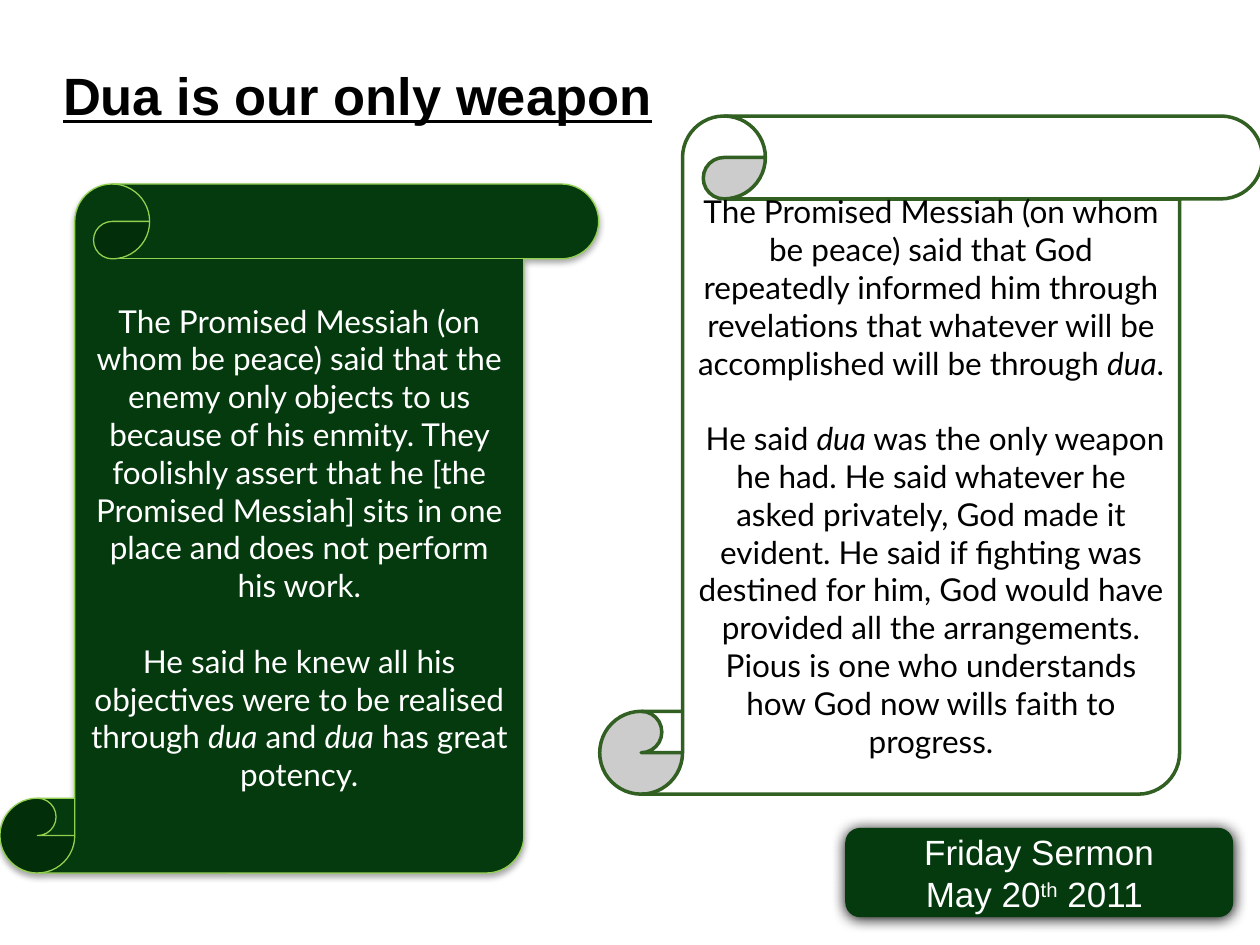
from lxml.etree import SubElement
from pptx import Presentation
from pptx.dml.color import RGBColor
from pptx.enum.shapes import MSO_SHAPE as Preset
from pptx.enum.text import MSO_ANCHOR as Anchor, PP_ALIGN as Align
from pptx.oxml.ns import qn
from pptx.util import Cm, Pt

DARK_GREEN = RGBColor(0x04, 0x3A, 0x0D)
LIME = RGBColor(0x92, 0xD0, 0x50)
LEAF_GREEN = RGBColor(0x32, 0x60, 0x23)
WHITE = RGBColor(0xFF, 0xFF, 0xFF)
BLACK = RGBColor(0x00, 0x00, 0x00)

ENEMY_TEXT = [
    [("The Promised Messiah (on whom be peace) said that the enemy only objects "
      "to us because of his enmity. They foolishly assert that he [the Promised "
      "Messiah] sits in one place and does not perform his work.", "")],
    [("He said he knew all his objectives were to be realised through ", ""),
     ("dua", "italic"), (" and ", ""), ("dua", "italic"),
     (" has great potency.", "")],
]
WEAPON_TEXT = [
    [("The Promised Messiah (on whom be peace) said that God repeatedly informed "
      "him through revelations that whatever will be accomplished will be "
      "through ", ""), ("dua", "italic"), (".", "")],
    [(" He said ", ""), ("dua", "italic"),
     (" was the only weapon he had. He said whatever he asked privately, God made "
      "it evident. He said if fighting was destined for him, God would have "
      "provided all the arrangements. Pious is one who understands how God now "
      "wills faith to progress.", "")],
]
SERMON_TEXT = [
    [("Friday Sermon", "")],
    [("May 20", ""), ("th", "superscript"), (" 2011 ", "")],
]


def write_text(shape, paragraphs, *, size, color, font="Lato", align=Align.CENTER,
               anchor=Anchor.MIDDLE, bold=False, underline=False, gap=0):
    """Write paragraphs of (text, style) runs; gap is the points between them."""
    frame = shape.text_frame
    frame.word_wrap = True
    frame.vertical_anchor = anchor
    for index, runs in enumerate(paragraphs):
        paragraph = frame.add_paragraph() if index else frame.paragraphs[0]
        paragraph.alignment = align
        paragraph.space_before = Pt(gap if index else 0)
        for text, style in runs:
            run = paragraph.add_run()
            run.text = text
            run.font.name = font
            run.font.size = Pt(size)
            run.font.color.rgb = color
            run.font.bold = bold
            run.font.underline = underline
            run.font.italic = style == "italic"
            if style == "superscript":
                run.font._element.set("baseline", "30000")


def add_shadow(shape, opacity, blur, distance):
    """Cast a black shadow downwards; opacity in percent, lengths in points."""
    effects = shape._element.spPr.find(qn("a:effectLst"))
    shadow = SubElement(effects, qn("a:outerShdw"), blurRad=str(Pt(blur)),
                        dist=str(Pt(distance)), dir="5400000", rotWithShape="0")
    color = SubElement(shadow, qn("a:srgbClr"), val=str(BLACK))
    SubElement(color, qn("a:alpha"), val=str(opacity * 1000))


def add_panel(slide, preset, box, fill, line=None, line_width=0):
    shape = slide.shapes.add_shape(preset, *map(Cm, box))
    shape.shadow.inherit = False
    shape.fill.solid()
    shape.fill.fore_color.rgb = fill
    if line is None:
        shape.line.fill.background()
    else:
        shape.line.color.rgb = line
        shape.line.width = Pt(line_width)
    return shape


def add_title(slide, text):
    title = slide.shapes.title
    title.left, title.top, title.width, title.height = map(
        Cm, (1.27, 1.27, 22.86, 2.54))
    frame = title.text_frame
    frame.margin_left = frame.margin_right = 0
    frame.margin_top = frame.margin_bottom = 0
    write_text(title, [[(text, "")]], size=30, color=BLACK, font="Arial",
               align=Align.LEFT, anchor=Anchor.TOP, bold=True, underline=True)


def main():
    presentation = Presentation()
    presentation.slide_width = Cm(25.4)
    presentation.slide_height = Cm(19.05)
    slide = presentation.slides.add_slide(presentation.slide_layouts[5])

    enemy_scroll = add_panel(slide, Preset.VERTICAL_SCROLL,
                             (0, 3.71, 12.07, 13.89), DARK_GREEN, LIME, 0.75)
    add_shadow(enemy_scroll, opacity=35, blur=3.1, distance=1.8)
    write_text(enemy_scroll, ENEMY_TEXT, size=18, color=WHITE, gap=21.6)

    add_title(slide, "Dua is our only weapon")

    weapon_scroll = add_panel(slide, Preset.VERTICAL_SCROLL,
                              (12.09, 2.34, 13.36, 13.67), WHITE, LEAF_GREEN, 2)
    write_text(weapon_scroll, WEAPON_TEXT, size=18, color=BLACK, gap=21.6)

    sermon_badge = add_panel(slide, Preset.ROUNDED_RECTANGLE,
                             (17.04, 16.69, 7.82, 1.8), DARK_GREEN)
    add_shadow(sermon_badge, opacity=100, blur=8.5, distance=1)
    write_text(sermon_badge, SERMON_TEXT, size=20, color=WHITE, font="Arial")

    presentation.save("out.pptx")


if __name__ == "__main__":
    main()
